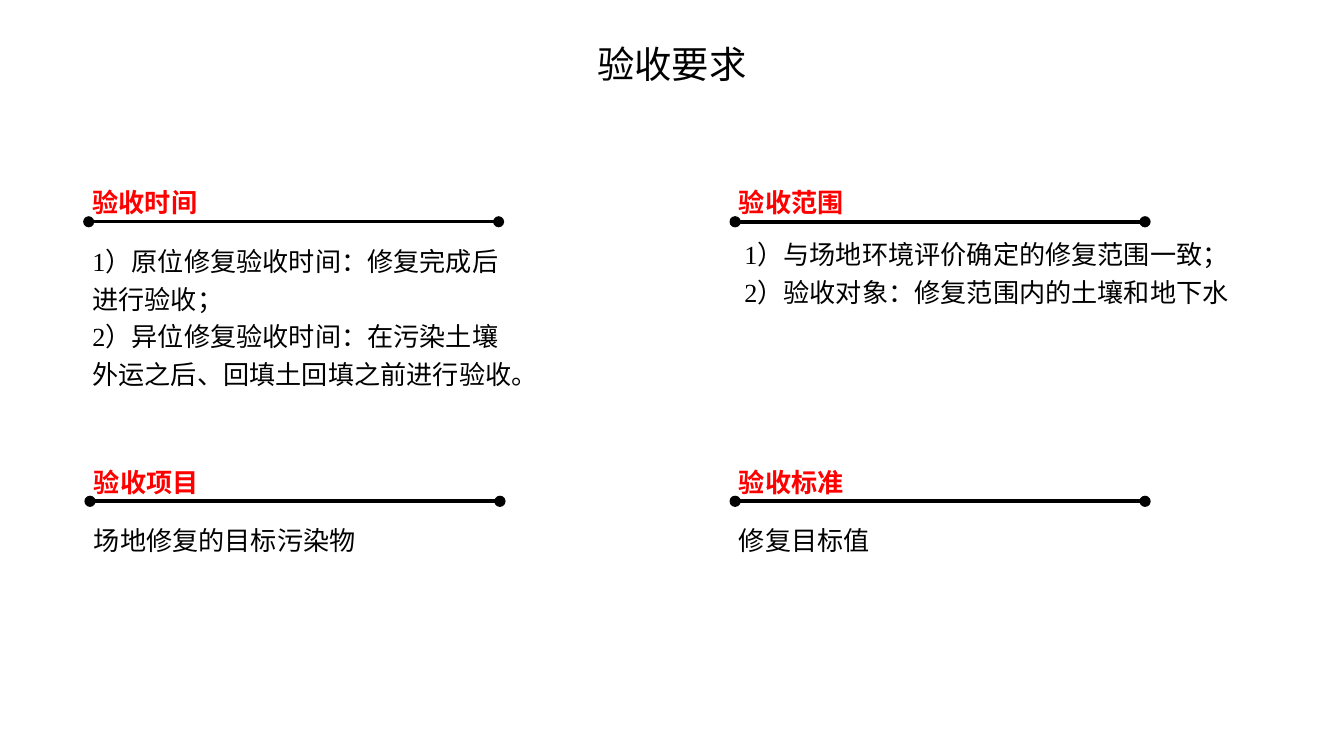
from lxml import etree
from pptx import Presentation
from pptx.dml.color import RGBColor
from pptx.enum.shapes import MSO_CONNECTOR
from pptx.enum.text import MSO_ANCHOR, MSO_AUTO_SIZE, PP_ALIGN
from pptx.oxml.ns import qn
from pptx.util import Inches, Pt

LINE = MSO_CONNECTOR.STRAIGHT
MIDDLE = MSO_ANCHOR.MIDDLE
GROW = MSO_AUTO_SIZE.SHAPE_TO_FIT_TEXT
FIXED = MSO_AUTO_SIZE.NONE
CENTER = PP_ALIGN.CENTER
SANS = "Noto Sans CJK SC"
SERIF = "Times New Roman"
BLACK = "000000"
RED = "FF0000"
RULE = 3.05
TOPICS = [
    (0.59, 1.34, "验收时间", 1.75, (0.59, 1.73, 3.4, 1.23),
     ["1）原位修复验收时间：修复完成后进行验收；",
      "2）异位修复验收时间：在污染土壤外运之后、回填土回填之前进行验收。"]),
    (5.4, 1.34, "验收范围", 2, (5.44, 1.68, 4.06, 0.64),
     ["1）与场地环境评价确定的修复范围一致；",
      "2）验收对象：修复范围内的土壤和地下水"]),
    (0.6, 3.42, "验收项目", 2, (0.6, 3.81, 3.85, 0.36),
     ["场地修复的目标污染物"]),
    (5.4, 3.42, "验收标准", 2, (5.4, 3.81, 3.95, 0.36),
     ["修复目标值"]),
]


def color(code):
    """Turn a hex string into a colour."""
    return RGBColor.from_string(code)


def add_text(slide, box, lines, size, face, ink=BLACK, bold=False, space=None):
    """Add a wrapped text box with one paragraph per line."""
    frame = slide.shapes.add_textbox(*map(Inches, box)).text_frame
    frame.word_wrap = True
    frame.auto_size = GROW
    frame.text = "\n".join(lines)
    for para in frame.paragraphs:
        para.line_spacing = space
        font = para.font
        font.size = Pt(size)
        font.bold = bold
        font.color.rgb = color(ink)
        font.name = face
    return frame


def add_title(slide, text):
    """Add the centred slide title."""
    frame = add_text(slide, (0.5, 0.19, 9, 0.56), [text], 20, SANS)
    frame.auto_size = FIXED
    frame.vertical_anchor = MIDDLE
    frame.paragraphs[0].alignment = CENTER


def add_rule(slide, left, top, weight):
    """Add a level line with a round dot at each end."""
    ends = map(Inches, (left, top, left + RULE, top))
    rule = slide.shapes.add_connector(LINE, *ends)
    rule.line.color.rgb = color(BLACK)
    rule.line.width = Pt(weight)
    stroke = rule.line._get_or_add_ln()
    for end in ("a:headEnd", "a:tailEnd"):
        etree.SubElement(stroke, qn(end), type="oval")
    etree.SubElement(rule._element.spPr, qn("a:effectLst"))


def add_topic(slide, left, top, head, weight, box, lines):
    """Add a red heading, its rule and the body text."""
    add_text(slide, (left, top, 3.12, 0.34), [head], 14, SANS, RED, True)
    add_rule(slide, left + 0.07, top + 0.31, weight)
    add_text(slide, box, lines, 14, SERIF, space=1.2)


def main():
    """Build the slide and save it."""
    deck = Presentation()
    deck.slide_width = Inches(10)
    deck.slide_height = Inches(10) * 9 // 16
    slide = deck.slides.add_slide(deck.slide_layouts[6])
    add_title(slide, "验收要求")
    for topic in TOPICS:
        add_topic(slide, *topic)
    deck.save("out.pptx")


if __name__ == "__main__":
    main()
